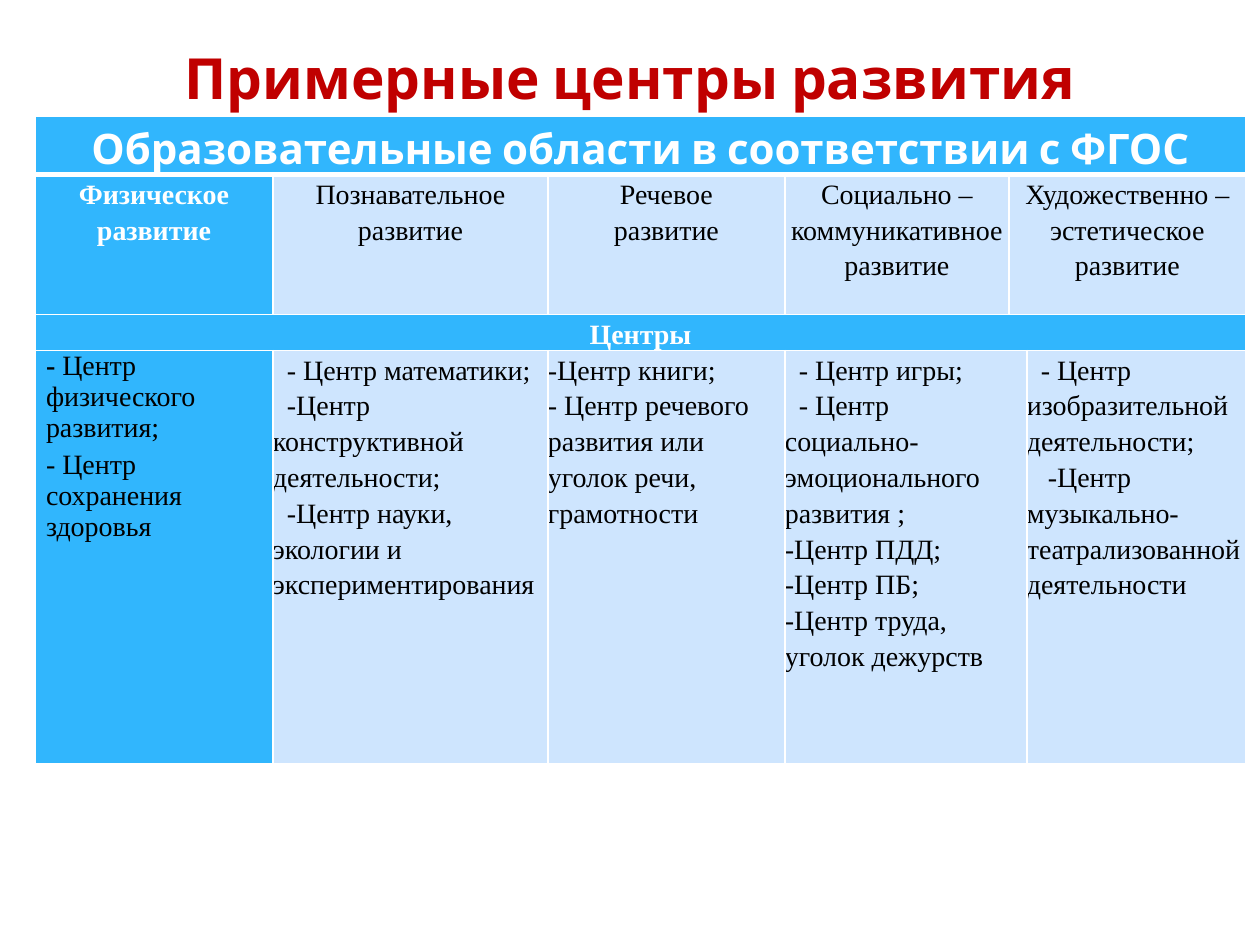
import collections

import pptx
import pptx.dml.color
import pptx.enum.text
import pptx.oxml
import pptx.oxml.ns
import pptx.util

PX = 914400 // 126
COLORS = {"title": "C00000", "accent": "31B6FD", "pale": "CEE5FE",
          "white": "FFFFFF", "black": "000000"}
SERIF, SANS = "Times New Roman", "Cabin"
CENTER = pptx.enum.text.PP_ALIGN.CENTER
LEFT = pptx.enum.text.PP_ALIGN.LEFT

# One paragraph: bold lead, text, first-line indent in px
Item = collections.namedtuple("Item", "text indent lead", defaults=(0, ""))

COLUMN_WIDTHS = [238, 275, 237, 224, 18, 219]
ROW_HEIGHTS = [58, 140, 29, 413]
# Start column and column span of each cell
FULL_ROW = [(0, 6)]
AREA_SPANS = [(0, 1), (1, 1), (2, 1), (3, 1), (4, 2)]
CENTER_SPANS = [(0, 1), (1, 1), (2, 1), (3, 2), (5, 1)]

AREAS = [
    [Item("Физическое развитие")],
    [Item("Познавательное развитие")],
    [Item("Речевое"), Item("развитие")],
    [Item("Социально – коммуникативное"), Item("развитие")],
    [Item("Художественно – эстетическое развитие")],
]
CENTERS = [
    [Item("Центр физического развития;", lead="- "),
     Item("- Центр сохранения здоровья")],
    [Item("- Центр математики;", 14),
     Item("-Центр конструктивной деятельности;", 14),
     Item("-Центр науки, экологии и экспериментирования", 14)],
    [Item("-Центр книги;"),
     Item("- Центр речевого развития или уголок речи, грамотности")],
    [Item("- Центр игры;", 14),
     Item("- Центр социально-эмоционального развития ;", 14),
     Item("-Центр ПДД;"),
     Item("-Центр ПБ;"),
     Item("-Центр труда, уголок дежурств")],
    [Item("- Центр изобразительной деятельности;", 14),
     Item("-Центр музыкально- театрализованной деятельности", 21)],
]


def px(length):
    return pptx.util.Emu(length * PX)


def rgb(name):
    return pptx.dml.color.RGBColor.from_string(COLORS[name])


def add_run(paragraph, text, font=SERIF, size=16, color="black", bold=False):
    run = paragraph.add_run()
    run.text = text
    run.font.name = font
    run.font.size = pptx.util.Pt(size)
    run.font.bold = bold
    run.font.color.rgb = rgb(color)


def write_items(frame, items, align=LEFT, spacing=1.15, margin=0, gap=0, **font):
    for number, item in enumerate(items):
        paragraph = frame.add_paragraph() if number else frame.paragraphs[0]
        paragraph.alignment = align
        paragraph.line_spacing = spacing
        properties = paragraph._p.get_or_add_pPr()
        properties.set("marL", str(px(margin)))
        properties.set("indent", str(px(item.indent)))
        if number and gap:
            paragraph.space_before = pptx.util.Pt(gap)
        if item.lead:
            add_run(paragraph, item.lead, **{**font, "bold": True})
        add_run(paragraph, item.text, **font)


def set_borders(cell, **widths):
    """Draw white borders of 1 pt, or of the width given for a side (L, R, T, B)."""
    properties = cell._tc.get_or_add_tcPr()
    for side in "LRTB":
        width = pptx.util.Pt(widths.get(side, 1))
        properties.append(pptx.oxml.parse_xml(
            f'<a:ln{side} {pptx.oxml.ns.nsdecls("a")} w="{width}"><a:solidFill>'
            f'<a:srgbClr val="{COLORS["white"]}"/></a:solidFill></a:ln{side}>'))


class SlideBuilder:
    def __init__(self, presentation):
        self.slide = presentation.slides.add_slide(presentation.slide_layouts[5])

    def title(self, text, left, top, width, height):
        shape = self.slide.shapes.title
        shape.left, shape.top, shape.width, shape.height = map(
            px, (left, top, width, height))
        frame = shape.text_frame
        frame.word_wrap = True
        frame.auto_size = pptx.enum.text.MSO_AUTO_SIZE.NONE
        frame.vertical_anchor = pptx.enum.text.MSO_ANCHOR.MIDDLE
        write_items(frame, [Item(text)], CENTER, 1, font=SANS, size=32.4,
                    color="title", bold=True)

    def table(self, left, top, widths, heights):
        table = self.slide.shapes.add_table(
            len(heights), len(widths), px(left), px(top),
            px(sum(widths)), px(sum(heights))).table
        for column, width in zip(table.columns, widths):
            column.width = px(width)
        for row, height in zip(table.rows, heights):
            row.height = px(height)
        return table

    def cell(self, table, row, place, items, fill, borders, **style):
        start, span = place
        for column in range(start, start + span):
            part = table.cell(row, column)
            set_borders(part, **borders)
            part.fill.solid()
            part.fill.fore_color.rgb = rgb(fill)
        cell = table.cell(row, start)
        if span > 1:
            cell.merge(table.cell(row, start + span - 1))
        cell.margin_left = cell.margin_right = 0
        cell.margin_top = cell.margin_bottom = 0
        write_items(cell.text_frame, items, **style)


def main():
    presentation = pptx.Presentation()
    presentation.slide_width = pptx.util.Inches(10)
    presentation.slide_height = pptx.util.Inches(7.5)
    builder = SlideBuilder(presentation)
    builder.title("Примерные центры развития", 63, 38, 1134, 77)
    table = builder.table(35, 116, COLUMN_WIDTHS, ROW_HEIGHTS)

    heading = dict(align=CENTER, color="white", bold=True)
    area = dict(align=CENTER)
    first_list = dict(spacing=1, margin=11, gap=3)
    rows = [
        (FULL_ROW, [[Item("Образовательные области в соответствии с ФГОС")]],
         {"B": 3}, dict(heading, font=SANS, size=24), {}),
        (AREA_SPANS, AREAS, {"T": 3}, heading, area),
        (FULL_ROW, [[Item("Центры")]], {}, heading, {}),
        (CENTER_SPANS, CENTERS, {}, first_list, {}),
    ]
    for row, (places, contents, borders, first_style, style) in enumerate(rows):
        for place, items in zip(places, contents):
            is_first = place[0] == 0
            builder.cell(table, row, place, items,
                         "accent" if is_first else "pale", borders,
                         **(first_style if is_first else style))
    presentation.save("out.pptx")


if __name__ == "__main__":
    main()
